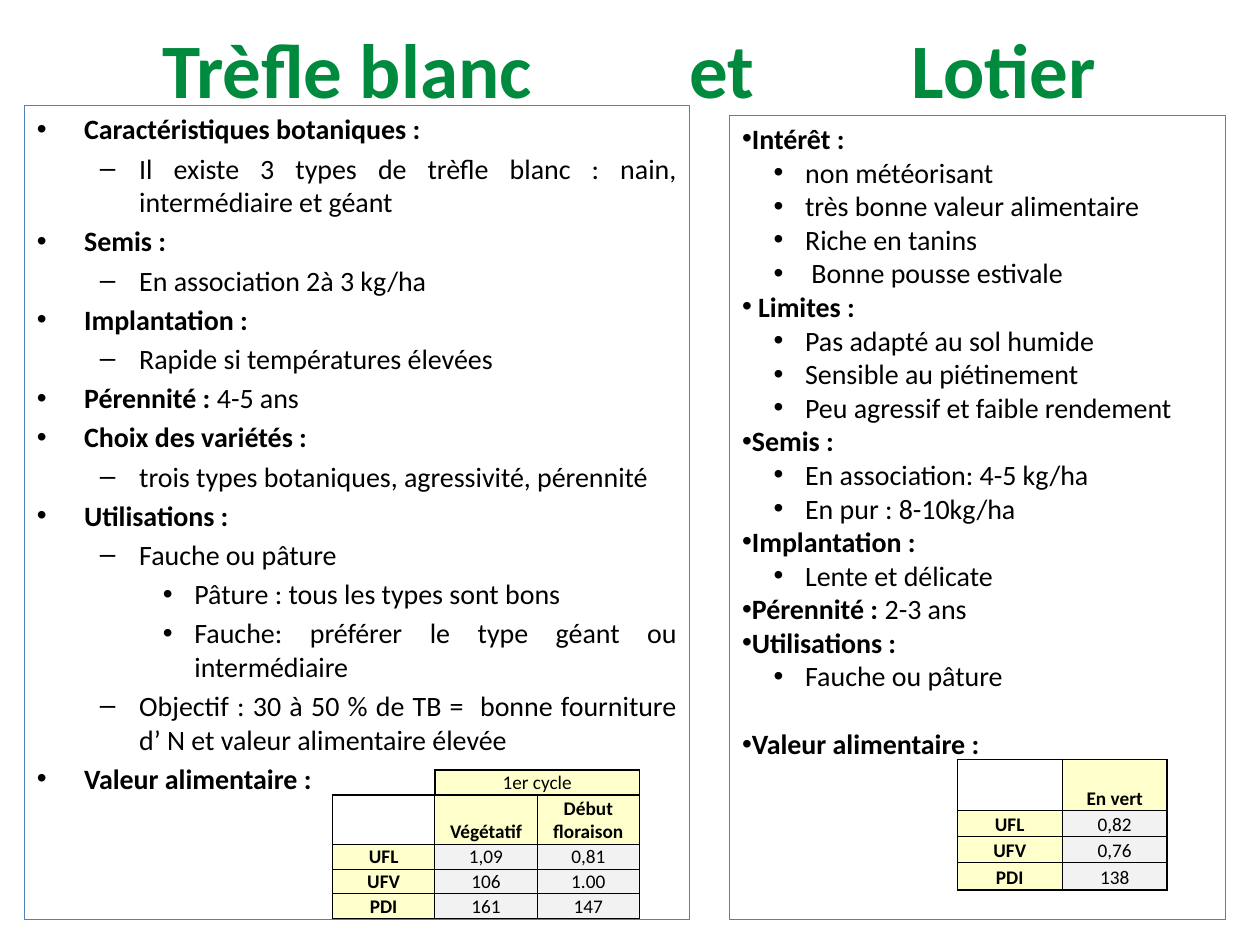
from lxml.etree import SubElement
from pptx import Presentation
from pptx.dml.color import RGBColor
from pptx.enum.text import MSO_ANCHOR as Anchor, MSO_AUTO_SIZE as AutoSize, PP_ALIGN as Align
from pptx.oxml.ns import qn
from pptx.util import Pt

COLORS = {
    "text": "000000", "title": "008A3E", "outline": "4F81BD",
    "header": "FFFFCC", "value": "F2F2F2",
}

# Each level: left margin, first-line indent, bullet
CLOVER_LEVELS = [(27, -27, "•"), (58.5, -22.5, "–"), (90, -18, "•")]
LOTUS_LEVELS = [(0, 0, "•"), (36, -18, "•")]

# Each line: level, text; "|" ends the bold part
CLOVER_LINES = [
    (0, "Caractéristiques botaniques :"),
    (1, "Il existe 3 types de trèfle blanc : nain, intermédiaire et géant"),
    (0, "Semis :"),
    (1, "En association 2à 3 kg/ha"),
    (0, "Implantation :"),
    (1, "Rapide si températures élevées"),
    (0, "Pérennité : |4-5 ans"),
    (0, "Choix des variétés :"),
    (1, "trois types botaniques, agressivité, pérennité"),
    (0, "Utilisations :"),
    (1, "Fauche ou pâture"),
    (2, "Pâture : tous les types sont bons"),
    (2, "Fauche: préférer le type géant ou intermédiaire"),
    (1, "Objectif : 30 à 50 % de TB =  bonne fourniture d’ N et valeur alimentaire élevée"),
    (0, "Valeur alimentaire :"),
]
LOTUS_LINES = [
    (0, "Intérêt :"),
    (1, "non météorisant"),
    (1, "très bonne valeur alimentaire"),
    (1, "Riche en tanins"),
    (1, " Bonne pousse estivale"),
    (0, " Limites :"),
    (1, "Pas adapté au sol humide"),
    (1, "Sensible au piétinement"),
    (1, "Peu agressif et faible rendement"),
    (0, "Semis :"),
    (1, "En association: 4-5 kg/ha"),
    (1, "En pur : 8-10kg/ha"),
    (0, "Implantation :"),
    (1, "Lente et délicate"),
    (0, "Pérennité : |2-3 ans"),
    (0, "Utilisations :"),
    (1, "Fauche ou pâture"),
    (0, "Valeur alimentaire :"),
]
CLOVER_VALUES = [
    ["", "1er cycle", ""],
    ["", "Végétatif", "Début floraison"],
    ["UFL", "1,09", "0,81"],
    ["UFV", "106", "1.00"],
    ["PDI", "161", "147"],
]
LOTUS_VALUES = [["", "En vert"], ["UFL", "0,82"], ["UFV", "0,76"], ["PDI", "138"]]


def rgb(name):
    return RGBColor.from_string(COLORS[name])


class SlideBuilder:
    font_name = "Calibri"
    title_size, body_size, table_size = 44, 16, 11

    def __init__(self, slide):
        self.slide = slide

    def style(self, font, size, bold, color="text"):
        font.name, font.size, font.bold = self.font_name, Pt(size), bold
        font.color.rgb = rgb(color)

    def indent(self, paragraph, margin, first_line=0):
        properties = paragraph._p.get_or_add_pPr()
        properties.set("marL", str(Pt(margin)))
        properties.set("indent", str(Pt(first_line)))
        return properties

    def title(self, words, margin, gap, left, top, width, height):
        """Write the words on one line, each space widened by gap."""
        shape = self.slide.shapes.title
        shape.left, shape.top, shape.width, shape.height = map(Pt, (left, top, width, height))
        frame = shape.text_frame
        frame.auto_size, frame.vertical_anchor = AutoSize.NONE, Anchor.MIDDLE
        paragraph = frame.paragraphs[0]
        paragraph.alignment = Align.LEFT
        self.indent(paragraph, margin)
        self.style(paragraph.font, self.title_size, True, "title")
        for index, word in enumerate(words):
            if index:
                space = paragraph.add_run()
                space.text = " "
                space._r.get_or_add_rPr().set("spc", str(gap * 100))
            paragraph.add_run().text = word

    def bullet_box(self, lines, levels, left, top, width, height, gap=0, last_gap=0):
        shape = self.slide.shapes.add_textbox(*map(Pt, (left, top, width, height)))
        shape.line.color.rgb = rgb("outline")
        shape.line.width = Pt(0.75)
        frame = shape.text_frame
        frame.word_wrap = True
        for index, (level, text) in enumerate(lines):
            paragraph = frame.add_paragraph() if index else frame.paragraphs[0]
            paragraph.alignment, paragraph.level = Align.JUSTIFY, level
            if index:
                is_last = index == len(lines) - 1
                paragraph.space_before = Pt(last_gap if is_last and last_gap else gap)
            margin, first_line, bullet = levels[level]
            properties = self.indent(paragraph, margin, first_line)
            SubElement(properties, qn("a:buFont"), typeface="Arial")
            SubElement(properties, qn("a:buChar"), char=bullet)
            self.style(paragraph.font, self.body_size, level == 0)
            for part, run_text in enumerate(text.split("|")):
                run = paragraph.add_run()
                run.text = run_text
                if part:
                    run.font.bold = False

    def borders(self, cell, **widths):
        """Draw the L, R, T and B borders; a width of 0 hides the line."""
        properties = cell._tc.get_or_add_tcPr()
        for side, width in widths.items():
            line = SubElement(properties, qn(f"a:ln{side}"), w=str(Pt(width)))
            if width:
                fill = SubElement(line, qn("a:solidFill"))
                SubElement(fill, qn("a:srgbClr"), val=COLORS["text"])
            else:
                SubElement(line, qn("a:noFill"))

    def cell_text(self, cell, text, bold):
        cell.margin_left = cell.margin_right = cell.margin_top = Pt(0.72)
        cell.margin_bottom = 0
        cell.vertical_anchor = Anchor.BOTTOM
        paragraph = cell.text_frame.paragraphs[0]
        paragraph.alignment = Align.CENTER
        self.style(paragraph.font, self.table_size, bold)
        if text:
            paragraph.add_run().text = text
        else:
            SubElement(paragraph._p, qn("a:endParaRPr"), sz=str(self.table_size * 100))

    def value_table(self, values, left, top, column_width, row_heights, header_row=0):
        """Draw a table; rows above header_row hold one label over all value columns."""
        rows, columns = len(values), len(values[0])
        table = self.slide.shapes.add_table(
            rows, columns, Pt(left), Pt(top),
            Pt(column_width * columns), Pt(sum(row_heights))).table
        table.first_row = table.horz_banding = False
        for column in table.columns:
            column.width = Pt(column_width)
        for row, height in zip(table.rows, row_heights):
            row.height = Pt(height)
        for r, row in enumerate(values):
            for c, text in enumerate(row):
                cell = table.cell(r, c)
                above = r < header_row
                outside = above and c == 0
                self.cell_text(cell, text, c == 0 or r == header_row)
                self.borders(
                    cell,
                    L=0 if outside else 1 if c == 0 or (above and c == 1) else 0.5,
                    R=1 if above or c == columns - 1 else 0.5,
                    T=0 if outside else 1 if r <= header_row else 0.5,
                    B=1 if above or r == rows - 1 else 0.5)
                if c == 0 and r <= header_row:
                    cell.fill.background()
                else:
                    cell.fill.solid()
                    is_header = c == 0 or r <= header_row
                    cell.fill.fore_color.rgb = rgb("header" if is_header else "value")
        for r in range(header_row):
            table.cell(r, 1).merge(table.cell(r, columns - 1))


def main():
    presentation = Presentation()
    presentation.slide_width, presentation.slide_height = Pt(720), Pt(540)
    title_only = presentation.slide_layouts[5]
    builder = SlideBuilder(presentation.slides.add_slide(title_only))
    builder.title(["Trèfle blanc", "et", "Lotier"], 49.5, 80, 36, 0, 648, 77)
    builder.bullet_box(CLOVER_LINES, CLOVER_LEVELS, 14, 60.5, 380, 465, gap=3.2)
    builder.bullet_box(LOTUS_LINES, LOTUS_LEVELS, 417, 66, 283.5, 459.5, last_gap=19.5)
    builder.value_table(CLOVER_VALUES, 190, 440, 58.5,
                        [14.2, 28.2, 14.2, 14.2, 14.2], header_row=1)
    builder.value_table(LOTUS_VALUES, 547, 434, 60, [29, 15, 15, 15.5])
    presentation.save("out.pptx")


if __name__ == "__main__":
    main()
